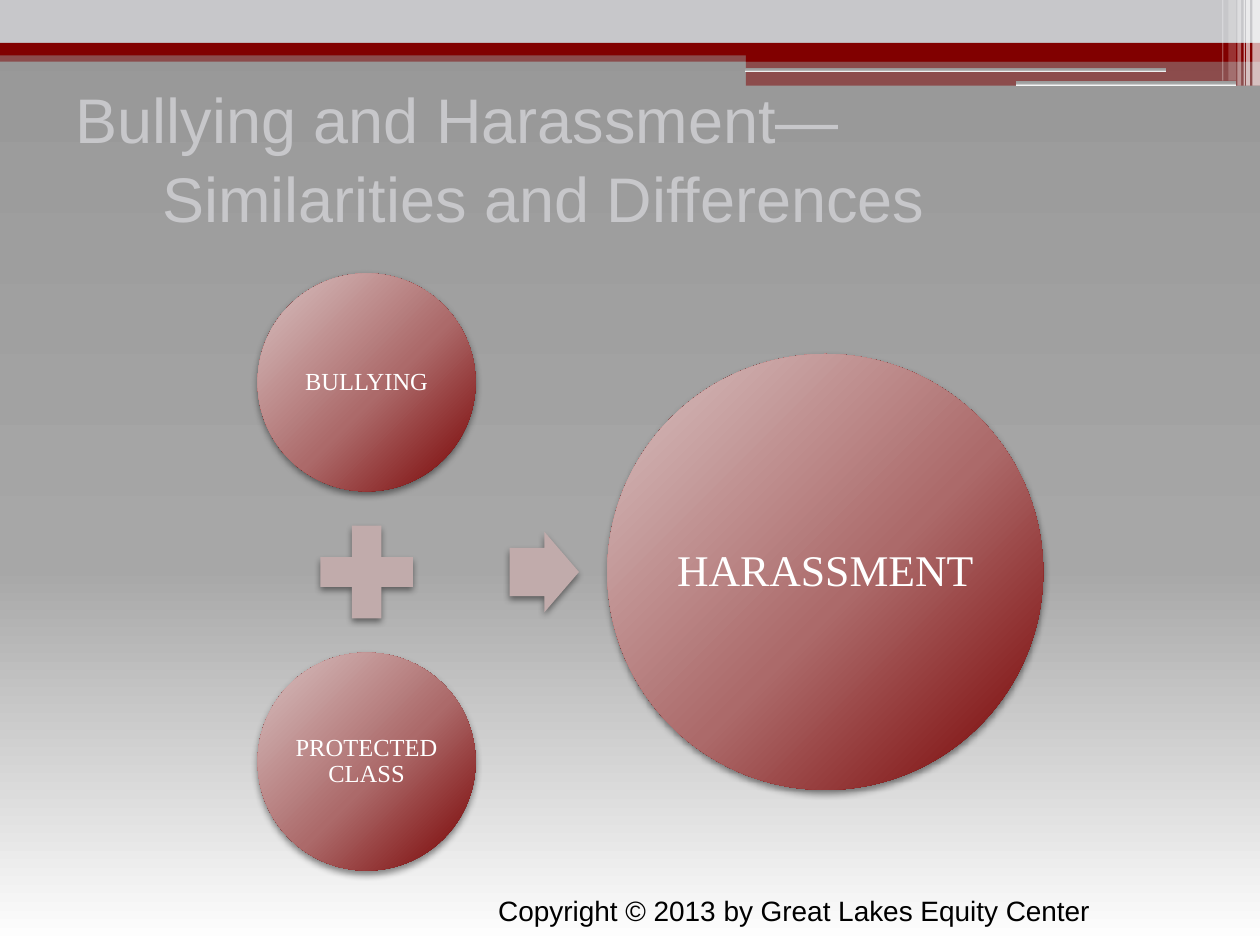
from dataclasses import dataclass

from lxml import etree
from pptx import Presentation
from pptx import util as u
from pptx.dml.color import RGBColor
from pptx.enum import shapes, text
from pptx.oxml.ns import qn

SHAPE = shapes.MSO_SHAPE


@dataclass(frozen=True)
class Theme:
    red: str = "810000"
    silver: str = "C7C7CA"
    white: str = "FFFFFF"
    black: str = "000000"
    operator: str = "C1ABAB"
    backdrop: tuple = ((0, "979797"), (60, "A7A7A7"), (100, "FFFFFF"))
    ball: tuple = ((0, "D9C3C3"), (55, "AC6A6A"), (100, "780000"))
    sans: str = "Arial"
    serif: str = "Times New Roman"
    title_size: int = 36
    footer_size: int = 16
    small_size: int = 14
    large_size: int = 25


THEME = Theme()
WIDTH, HEIGHT = 10, 7.5

TITLE = ("Bullying and Harassment—", "Similarities and Differences")
TITLE_INDENT = 0.69
CAUSES = ("BULLYING", "PROTECTED CLASS")
RESULT = "HARASSMENT"
COPYRIGHT = "Copyright © 2013 by Great Lakes Equity Center"

# Header bands: left, top, width, height, colour, opacity in percent
BANDS = (
    (0, 0.4, WIDTH, 0.09, THEME.red, 50),
    (0, 0, WIDTH, 0.34, THEME.silver, 100),
    (0, 0.34, WIDTH, 0.1, THEME.red, 100),
    (5.92, 0.39, 4.08, 0.1, THEME.red, 100),
    (5.92, 0.48, 4.08, 0.2, THEME.red, 50),
)
# Thin rounded bars: left, top, width, height
BARS = ((5.91, 0.54, 3.35, 0.03), (8.06, 0.64, 1.75, 0.04))
# White vertical stripes: left, width, height, opacity in percent
STRIPES = (
    (9.94, 0.06, 0.68, 65), (9.89, 0.03, 0.68, 65), (9.87, 0.01, 0.68, 60),
    (9.82, 0.03, 0.68, 40), (9.75, 0.06, 0.64, 20), (9.7, 0.01, 0.64, 30),
)

# Equation: causes stacked in one column, the result to their right
MIDDLE = 4.54
CAUSE_X, RESULT_X, ARROW_X = 2.91, 6.55, 4.32
SMALL = 1.73
LARGE = 2 * SMALL
PLUS = 1
ROW_GAP = 0.14
ARROW = (0.55, 0.64)


def gradient(owner, fill, stops, radial=False):
    """Give fill a multi-stop gradient, linear downwards or radial from beyond the corner."""
    fill.solid()
    plain = owner.find(".//" + qn("a:solidFill"))
    grad = etree.Element(qn("a:gradFill"), rotWithShape="1")
    stop_list = etree.SubElement(grad, qn("a:gsLst"))
    for share, colour in stops:
        stop = etree.SubElement(stop_list, qn("a:gs"), pos=str(share * 1000))
        etree.SubElement(stop, qn("a:srgbClr"), val=colour)
    if radial:
        circle = etree.SubElement(grad, qn("a:path"))
        circle.set("path", "circle")
        etree.SubElement(circle, qn("a:fillToRect"),
                         l="-40000", t="-90000", r="140000", b="190000")
    else:
        etree.SubElement(grad, qn("a:lin"), ang="5400000", scaled="0")
    plain.getparent().replace(plain, grad)


def add_shape(page, kind, left, top, width, height, colour=None, opacity=100):
    shape = page.shapes.add_shape(kind, *map(u.Inches, (left, top, width, height)))
    shape.shadow.inherit = False
    shape.line.fill.background()
    if colour:
        shape.fill.solid()
        shape.fill.fore_color.rgb = RGBColor.from_string(colour)
        if opacity < 100:
            tone = shape.element.spPr.find(".//" + qn("a:srgbClr"))
            etree.SubElement(tone, qn("a:alpha"), val=str(opacity * 1000))
    return shape


def add_centred(page, kind, x, y, width, height, colour=None):
    """Add a shadowed shape around the centre x, y."""
    shape = add_shape(page, kind, x - width / 2, y - height / 2, width, height, colour)
    effects = shape.element.spPr.find(qn("a:effectLst"))
    shadow = etree.SubElement(effects, qn("a:outerShdw"), blurRad=str(u.Pt(4)),
                              dist=str(u.Pt(2)), dir="5400000", rotWithShape="0")
    tone = etree.SubElement(shadow, qn("a:srgbClr"), val=THEME.black)
    etree.SubElement(tone, qn("a:alpha"), val="45000")
    return shape


def add_run(para, words, size, font, colour):
    span = para.add_run()
    span.text = words
    span.font.size = u.Pt(size)
    span.font.name = font
    span.font.color.rgb = RGBColor.from_string(colour)


def add_ball(page, x, y, diameter, words, size):
    ball = add_centred(page, SHAPE.OVAL, x, y, diameter, diameter)
    gradient(ball.element, ball.fill, THEME.ball, radial=True)
    frame = ball.text_frame
    frame.word_wrap = True
    frame.vertical_anchor = text.MSO_ANCHOR.MIDDLE
    frame.margin_left = frame.margin_right = u.Inches(0.02)
    frame.margin_top = frame.margin_bottom = u.Inches(0.02)
    para = frame.paragraphs[0]
    para.alignment = text.PP_ALIGN.CENTER
    para.line_spacing = 0.9
    add_run(para, words, size, THEME.serif, THEME.white)


def add_header(page):
    for *place, colour, opacity in BANDS:
        add_shape(page, SHAPE.RECTANGLE, *place, colour, opacity)
    for place in BARS:
        bar = add_shape(page, SHAPE.ROUNDED_RECTANGLE, *place)
        gradient(bar.element, bar.fill, THEME.backdrop)
    for left, width, height, opacity in STRIPES:
        add_shape(page, SHAPE.RECTANGLE, left, 0, width, height, THEME.white, opacity)


def set_title(page):
    title = page.shapes.title
    title.left, title.top, title.width, title.height = map(u.Inches, (0.5, 0.67, 9.5, 1.17))
    frame = title.text_frame
    frame.word_wrap = True
    frame.auto_size = text.MSO_AUTO_SIZE.NONE
    frame.vertical_anchor = text.MSO_ANCHOR.MIDDLE
    for row, words in enumerate(TITLE):
        para = frame.add_paragraph() if row else frame.paragraphs[0]
        para.alignment = text.PP_ALIGN.LEFT
        if row:
            para.space_before = u.Pt(2)
            properties = para._p.get_or_add_pPr()
            properties.set("marL", str(u.Inches(TITLE_INDENT)))
            properties.set("indent", "0")
        add_run(para, words, THEME.title_size, THEME.sans, THEME.silver)


def add_equation(page):
    offset = (PLUS + SMALL) / 2 + ROW_GAP
    for words, y in zip(CAUSES, (MIDDLE - offset, MIDDLE + offset)):
        add_ball(page, CAUSE_X, y, SMALL, words, THEME.small_size)
    add_centred(page, SHAPE.MATH_PLUS, CAUSE_X, MIDDLE, PLUS, PLUS, THEME.operator)
    arrow = add_centred(page, SHAPE.RIGHT_ARROW, ARROW_X, MIDDLE, *ARROW, THEME.operator)
    arrow.adjustments[0] = 0.6
    arrow.adjustments[1] = 0.5
    add_ball(page, RESULT_X, MIDDLE, LARGE, RESULT, THEME.large_size)


def add_copyright(page):
    box = page.shapes.add_textbox(*map(u.Inches, (3.83, 7.04, 4.92, 0.37)))
    box.text_frame.word_wrap = True
    para = box.text_frame.paragraphs[0]
    para.alignment = text.PP_ALIGN.RIGHT
    add_run(para, COPYRIGHT, THEME.footer_size, THEME.sans, THEME.black)


def main():
    deck = Presentation()
    deck.slide_width, deck.slide_height = u.Inches(WIDTH), u.Inches(HEIGHT)
    page = deck.slides.add_slide(deck.slide_layouts[5])
    gradient(page.element, page.background.fill, THEME.backdrop)
    add_header(page)
    set_title(page)
    add_equation(page)
    add_copyright(page)
    deck.save("out.pptx")


if __name__ == "__main__":
    main()
